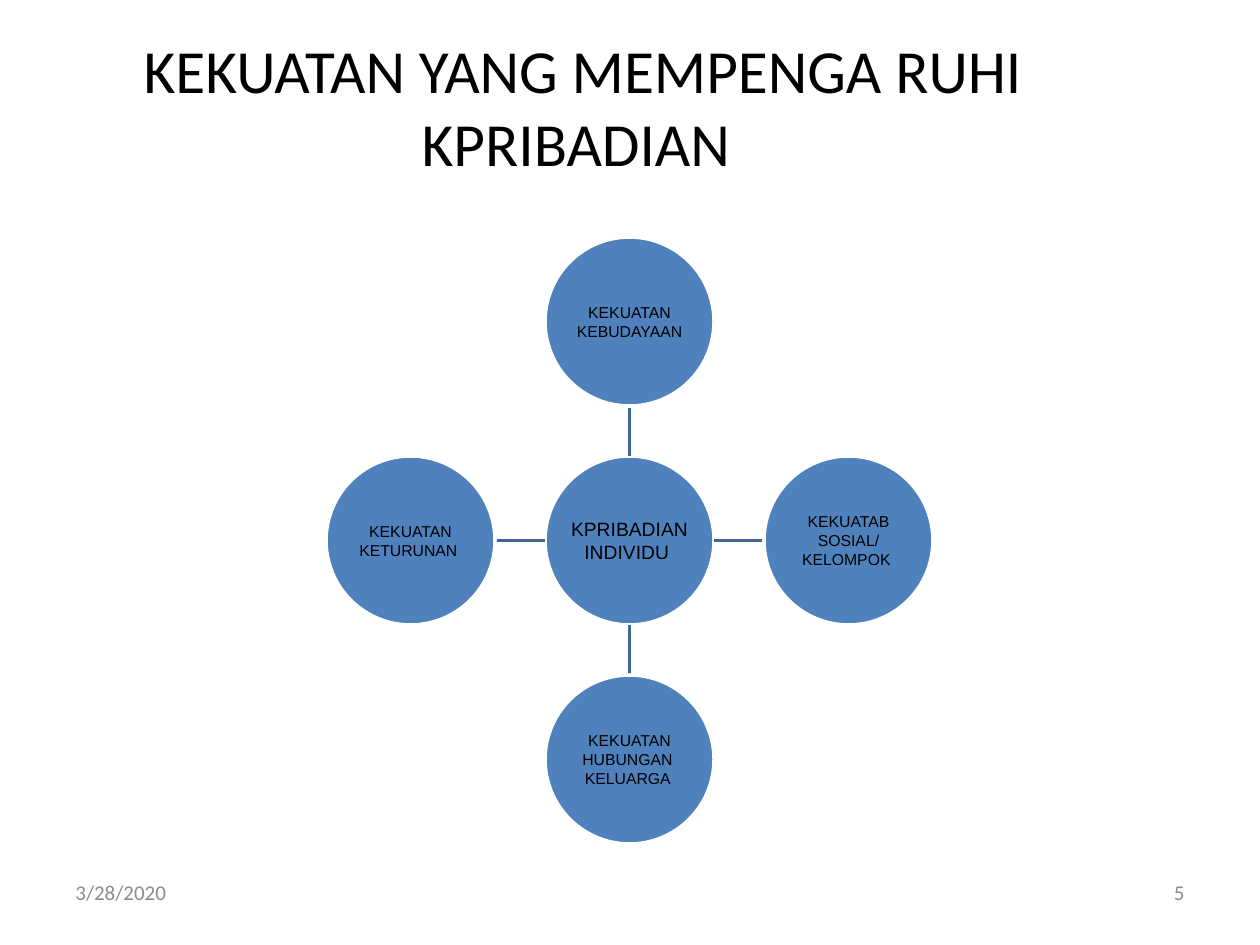
from pptx import Presentation
from pptx.dml.color import RGBColor
from pptx.enum.shapes import MSO_CONNECTOR, MSO_SHAPE
from pptx.enum.text import MSO_ANCHOR, PP_ALIGN
from pptx.oxml.ns import qn
from pptx.util import Pt

PX = 914400 / 126
BLACK = RGBColor(0x00, 0x00, 0x00)
WHITE = RGBColor(0xFF, 0xFF, 0xFF)
GREY = RGBColor(0x8C, 0x8C, 0x8C)
BLUE = RGBColor(0x4F, 0x81, 0xBD)
DARK_BLUE = RGBColor(0x3F, 0x67, 0x97)
LEFT, CENTER, RIGHT = PP_ALIGN.LEFT, PP_ALIGN.CENTER, PP_ALIGN.RIGHT
MIDDLE = MSO_ANCHOR.MIDDLE
STRAIGHT = MSO_CONNECTOR.STRAIGHT
OVAL = MSO_SHAPE.OVAL

DIAMETER = 169
HUB = ["KPRIBADIAN", "INDIVIDU "]
# Direction from the hub (x, y) and the lines of each force
FORCES = [
    (0, -1, ["KEKUATAN", " KEBUDAYAAN "]),
    (1, 0, ["KEKUATAB SOSIAL/", "KELOMPOK "]),
    (0, 1, ["KEKUATAN HUBUNGAN ", "KELUARGA "]),
    (-1, 0, ["KEKUATAN", "KETURUNAN "]),
]


def px(*lengths):
    return [round(length * PX) for length in lengths]


def write(frame, lines, font, size, color, align):
    frame.word_wrap = True
    frame.vertical_anchor = MIDDLE
    for i, line in enumerate(lines):
        paragraph = frame.paragraphs[0] if i == 0 else frame.add_paragraph()
        paragraph.alignment = align
        run = paragraph.add_run()
        run.text = line
        run.font.name = font
        run.font.size = Pt(size)
        run.font.color.rgb = color


def add_label(slide, box, text, size, color, align):
    label = slide.shapes.add_textbox(*px(*box))
    write(label.text_frame, [text], "Calibri", size, color, align)


def add_circle(slide, center_x, center_y, lines, size):
    radius = DIAMETER / 2
    circle = slide.shapes.add_shape(
        OVAL, *px(center_x - radius, center_y - radius, DIAMETER, DIAMETER))
    circle.shadow.inherit = False
    circle.fill.solid()
    circle.fill.fore_color.rgb = BLUE
    circle.line.color.rgb = WHITE
    circle.line.width = Pt(2)
    frame = circle.text_frame
    frame.margin_left, frame.margin_top, frame.margin_right, frame.margin_bottom = px(1, 1, 1, 1)
    write(frame, lines, "Arial", size, BLACK, CENTER)


def add_spoke(slide, start_x, start_y, end_x, end_y):
    spoke = slide.shapes.add_connector(STRAIGHT, *px(start_x, start_y, end_x, end_y))
    spoke.line.color.rgb = DARK_BLUE
    spoke.line.width = Pt(2)
    properties = spoke._element.spPr
    properties.append(properties.makeelement(qn("a:effectLst"), {}))


def add_radial_diagram(slide, left, top, side):
    """Hub in the middle of a square box, with the forces touching its sides."""
    hub_x, hub_y = left + side / 2, top + side / 2
    radius = DIAMETER / 2
    reach = side / 2 - radius
    add_circle(slide, hub_x, hub_y, HUB, 11)
    for dx, dy, lines in FORCES:
        add_spoke(slide, hub_x + dx * radius, hub_y + dy * radius,
                  hub_x + dx * (reach - radius), hub_y + dy * (reach - radius))
        add_circle(slide, hub_x + dx * reach, hub_y + dy * reach, lines, 9)


def main():
    deck = Presentation()
    deck.slide_width, deck.slide_height = px(1260, 945)
    slide = deck.slides.add_slide(deck.slide_layouts[6])
    add_label(slide, (63, 16, 1040, 179),
              "KEKUATAN YANG MEMPENGA RUHI KPRIBADIAN ", 35, BLACK, CENTER)
    add_radial_diagram(slide, 326, 237, 607)
    add_label(slide, (63, 861, 294, 63), "3/28/2020", 12, GREY, LEFT)
    add_label(slide, (903, 861, 294, 63), "5", 12, GREY, RIGHT)
    deck.save("out.pptx")


if __name__ == "__main__":
    main()
